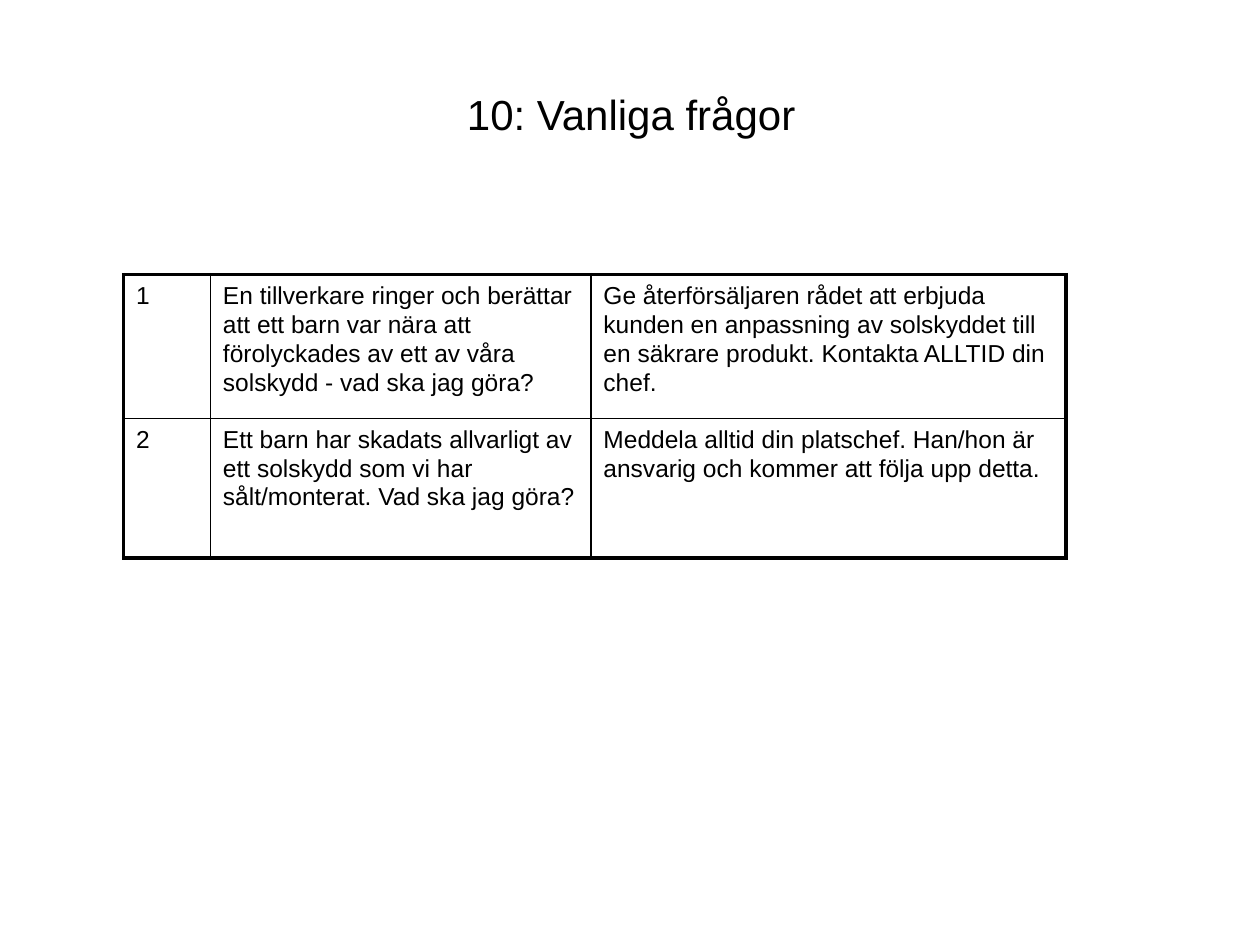
import pptx
import pptx.util
import pptx.dml.color
import pptx.enum.text
import pptx.oxml.ns
import lxml.etree

Inches = pptx.util.Inches
BLACK = pptx.dml.color.RGBColor(0, 0, 0)
WHITE = pptx.dml.color.RGBColor(255, 255, 255)
FONT = "Arial"
THIN, THICK = 1, 2.25
WIDTHS = [0.69, 3.02, 3.77]
HEIGHTS = [1.14, 1.11]
ROWS = [
    ["1",
     "En tillverkare ringer och berättar att ett barn var nära att förolyckades av ett av våra solskydd - vad ska jag göra?",
     "Ge återförsäljaren rådet att erbjuda kunden en anpassning av solskyddet till en säkrare produkt. Kontakta ALLTID din chef."],
    ["2",
     "Ett barn har skadats allvarligt av ett solskydd som vi har sålt/monterat. Vad ska jag göra?",
     "Meddela alltid din platschef. Han/hon är ansvarig och kommer att följa upp detta."],
]


def write(frame, text, size=14, align=pptx.enum.text.PP_ALIGN.LEFT, space=1.0):
    frame.word_wrap = True
    para = frame.paragraphs[0]
    para.alignment = align
    para.line_spacing = space
    run = para.add_run()
    run.text = text
    run.font.name = FONT
    run.font.size = pptx.util.Pt(size)
    run.font.color.rgb = BLACK


def add_title(slide, text):
    box = slide.shapes.add_textbox(Inches(0.51), Inches(0.28), Inches(9), Inches(1.25))
    box.text_frame.vertical_anchor = pptx.enum.text.MSO_ANCHOR.MIDDLE
    write(box.text_frame, text, size=24, align=pptx.enum.text.PP_ALIGN.CENTER)


def set_edge(cell, side, width):
    qn = pptx.oxml.ns.qn
    props = cell._tc.get_or_add_tcPr()
    line = lxml.etree.SubElement(props, qn("a:ln" + side), w=str(pptx.util.Pt(width)))
    fill = lxml.etree.SubElement(line, qn("a:solidFill"))
    lxml.etree.SubElement(fill, qn("a:srgbClr"), val=str(BLACK))


def add_grid(slide, rows):
    table = slide.shapes.add_table(
        len(rows), len(WIDTHS), Inches(0.98), Inches(2.18),
        Inches(sum(WIDTHS)), Inches(sum(HEIGHTS))).table
    table.first_row = table.horz_banding = False
    for col, width in zip(table.columns, WIDTHS):
        col.width = Inches(width)
    for row, height in zip(table.rows, HEIGHTS):
        row.height = Inches(height)
    for r, texts in enumerate(rows):
        for c, text in enumerate(texts):
            cell = table.cell(r, c)
            write(cell.text_frame, text, space=1.05)
            outer = {"L": c == 0, "R": c == len(texts) - 1,
                     "T": r == 0, "B": r == len(rows) - 1}
            for side, edge in outer.items():
                set_edge(cell, side, THICK if edge else THIN)
            cell.fill.background()


def main():
    deck = pptx.Presentation()
    deck.slide_width, deck.slide_height = Inches(10), Inches(7.5)
    slide = deck.slides.add_slide(deck.slide_layouts[6])
    slide.background.fill.solid()
    slide.background.fill.fore_color.rgb = WHITE
    add_title(slide, "10: Vanliga frågor")
    add_grid(slide, ROWS)
    deck.save("out.pptx")


if __name__ == "__main__":
    main()
